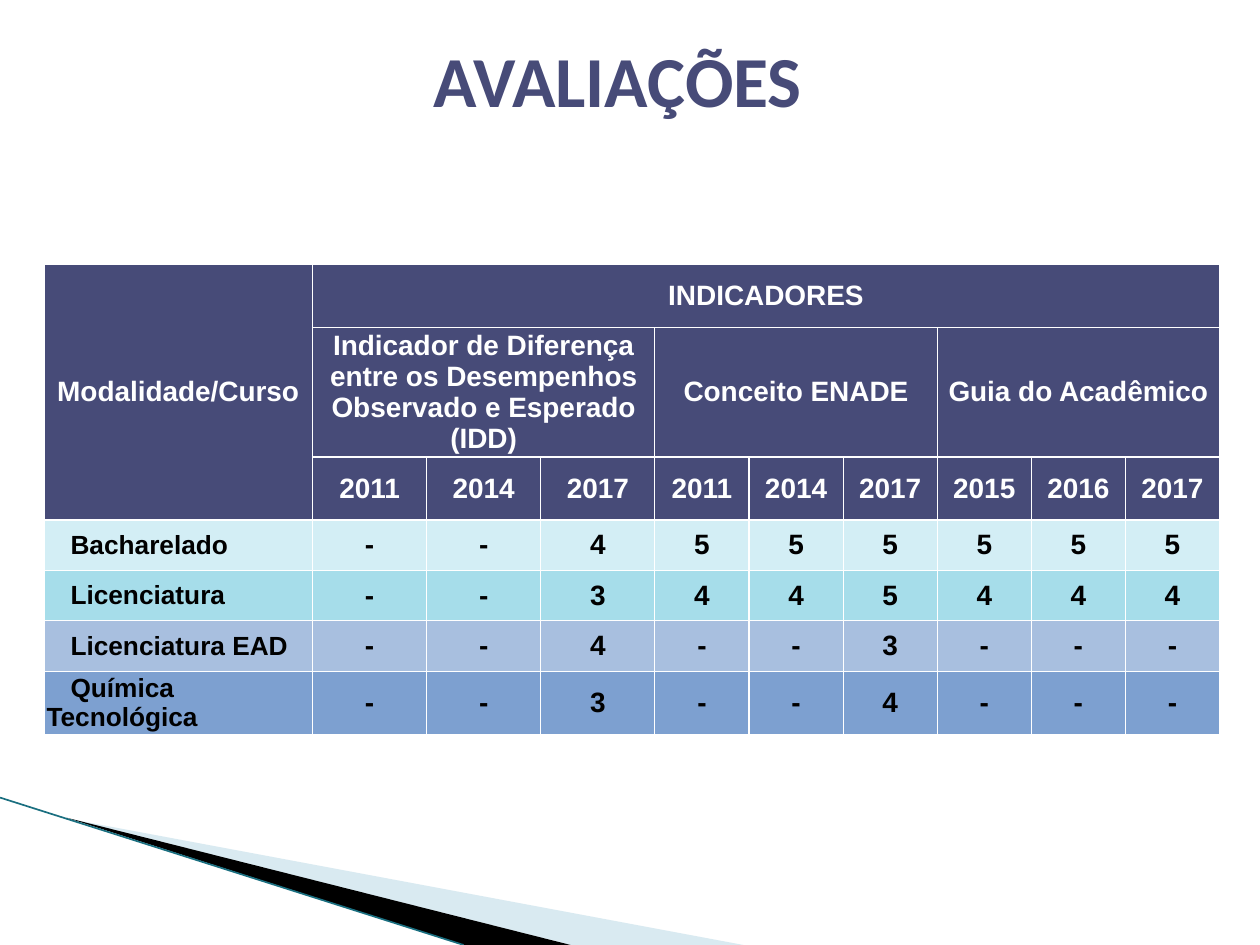
from lxml import etree
from pptx import Presentation
from pptx import util as u
from pptx.dml.color import RGBColor
from pptx.enum import shapes, text
from pptx.oxml.ns import qn

NAVY = RGBColor(0x47, 0x4B, 0x78)
WHITE = RGBColor(0xFF, 0xFF, 0xFF)
BLACK = RGBColor(0, 0, 0)
TEAL = RGBColor(0x1A, 0x6F, 0x80)
PALE = RGBColor(0xA0, 0xCB, 0xDC)
TINTS = [RGBColor(0xD3, 0xEE, 0xF5), RGBColor(0xA6, 0xDD, 0xEA),
         RGBColor(0xA8, 0xBF, 0xDF), RGBColor(0x7D, 0xA0, 0xD0)]

TITLE = "AVALIAÇÕES"
CORNER = "Modalidade/Curso"
BANNER = "INDICADORES"
GROUPS = [
    ("Indicador de Diferença entre os Desempenhos Observado e Esperado (IDD)",
     ["2011", "2014", "2017"]),
    ("Conceito ENADE", ["2011", "2014", "2017"]),
    ("Guia do Acadêmico", ["2015", "2016", "2017"]),
]
COURSES = [
    ("Bacharelado", "--4555555"),
    ("Licenciatura", "--3445444"),
    ("Licenciatura EAD", "--4--3---"),
    ("Química Tecnológica", "--3--4---"),
]
WIDE = 9.33
FIRST = 2.13
PARTS = [0.91] * 3 + [0.75] * 6
COLS = [FIRST] + [(WIDE - FIRST) * part / sum(PARTS) for part in PARTS]
ROWS = [0.5] * 3 + [0.4] * 4
WEDGES = [
    ([(0.55, 6.5), (5.9, 7.5), (4.53, 7.5)], PALE, 40),
    ([(0.53, 6.49), (4.53, 7.5), (3.68, 7.5)], BLACK, 100),
]


def write(frame, words, size=16, font="Arial", color=WHITE,
          align=text.PP_ALIGN.CENTER, indent=0):
    para = frame.paragraphs[0]
    para.alignment = align
    if indent:
        props = para._p.get_or_add_pPr()
        props.set("marL", "0")
        props.set("indent", str(u.Inches(indent)))
    run = para.add_run()
    run.text = words
    run.font.size = u.Pt(size)
    run.font.name = font
    run.font.bold = True
    run.font.color.rgb = color


def wedge(slide, points, color, alpha):
    spots = [(u.Inches(x), u.Inches(y)) for x, y in points]
    pen = slide.shapes.build_freeform(*spots[0])
    pen.add_line_segments(spots[1:], close=True)
    shape = pen.convert_to_shape()
    shape.shadow.inherit = False
    shape.line.fill.background()
    shape.fill.solid()
    shape.fill.fore_color.rgb = color
    if alpha < 100:
        tone = shape.fill._xPr.find(qn("a:solidFill"))[0]
        etree.SubElement(tone, qn("a:alpha")).set("val", str(alpha * 1000))


def dress(cell, color):
    props = cell._tc.get_or_add_tcPr()
    for side in "LRTB":
        edge = etree.SubElement(props, qn("a:ln" + side))
        edge.set("w", str(u.Pt(0.75)))
        paint = etree.SubElement(edge, qn("a:solidFill"))
        etree.SubElement(paint, qn("a:srgbClr")).set("val", str(WHITE))
    cell.fill.solid()
    cell.fill.fore_color.rgb = color
    cell.vertical_anchor = text.MSO_ANCHOR.MIDDLE
    cell.margin_left = cell.margin_right = u.Inches(0.02)
    cell.margin_top = cell.margin_bottom = u.Inches(0.02)


def grid(slide):
    table = slide.shapes.add_table(
        len(ROWS), len(COLS), u.Inches(0.35), u.Inches(2.1),
        u.Inches(WIDE), u.Inches(sum(ROWS))).table
    for col, width in zip(table.columns, COLS):
        col.width = u.Inches(width)
    for row, height in zip(table.rows, ROWS):
        row.height = u.Inches(height)
    for row, color in enumerate([NAVY] * 3 + TINTS):
        for col in range(len(COLS)):
            dress(table.cell(row, col), color)

    table.cell(0, 0).merge(table.cell(2, 0))
    table.cell(0, 1).merge(table.cell(0, len(COLS) - 1))
    write(table.cell(0, 0).text_frame, CORNER)
    write(table.cell(0, 1).text_frame, BANNER)
    col = 1
    for name, years in GROUPS:
        table.cell(1, col).merge(table.cell(1, col + len(years) - 1))
        write(table.cell(1, col).text_frame, name)
        for year in years:
            write(table.cell(2, col).text_frame, year)
            col += 1
    for row, (name, marks) in enumerate(COURSES, 3):
        write(table.cell(row, 0).text_frame, name, size=15, color=BLACK,
              align=text.PP_ALIGN.LEFT, indent=0.19)
        for col, mark in enumerate(marks, 1):
            write(table.cell(row, col).text_frame, mark, color=BLACK)


def main():
    deck = Presentation()
    deck.slide_width, deck.slide_height = u.Inches(10), u.Inches(7.5)
    slide = deck.slides.add_slide(deck.slide_layouts[5])
    for points, color, alpha in WEDGES:
        wedge(slide, points, color, alpha)
    line = slide.shapes.add_connector(
        shapes.MSO_CONNECTOR.STRAIGHT, 0, u.Inches(6.33),
        u.Inches(3.68), u.Inches(7.5))
    line.line.color.rgb = TEAL
    line.line.width = u.Pt(0.95)
    etree.SubElement(line._element.spPr, qn("a:effectLst"))
    grid(slide)
    title = slide.shapes.title
    title.left, title.top = u.Inches(0.01), 0
    title.width, title.height = u.Inches(9.79), u.Inches(1.25)
    title.text_frame.vertical_anchor = text.MSO_ANCHOR.MIDDLE
    write(title.text_frame, TITLE, size=41, font="Calibri", color=NAVY)
    deck.save("out.pptx")


if __name__ == "__main__":
    main()
